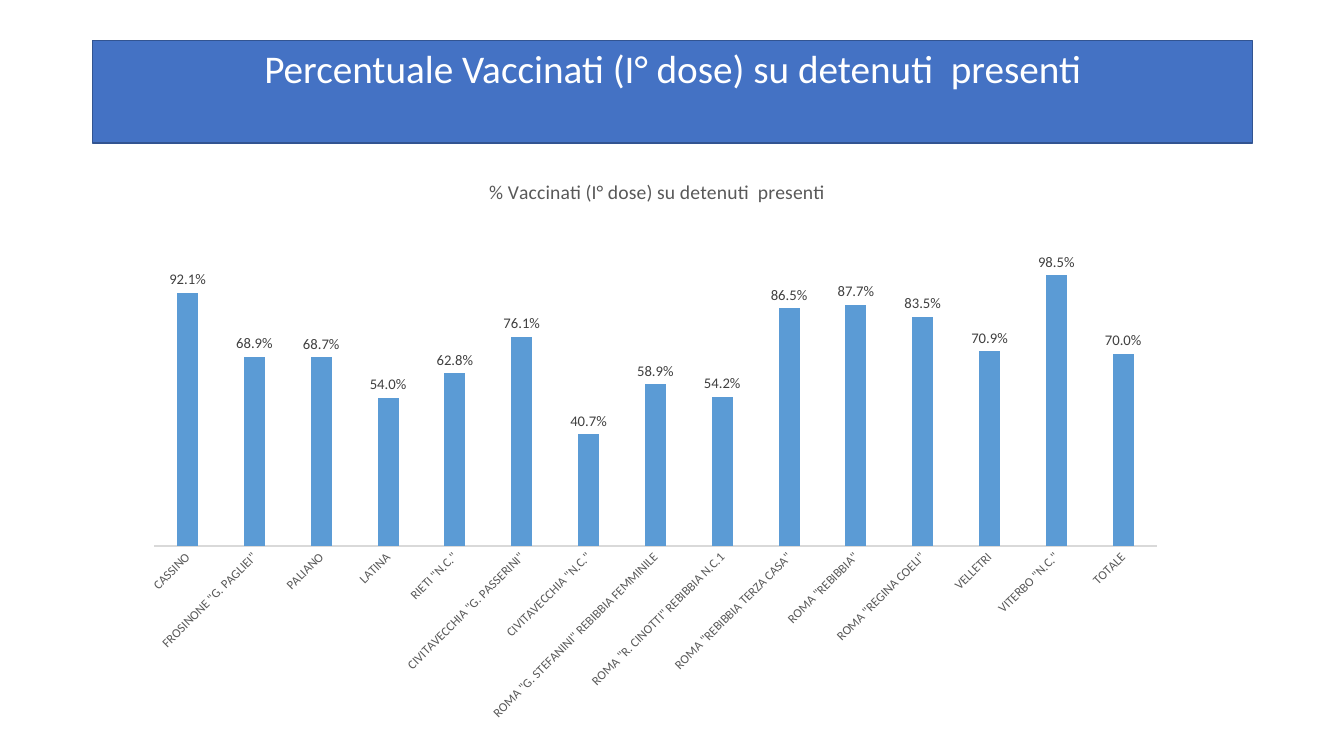
from lxml import etree
from pptx import Presentation
from pptx.chart.data import CategoryChartData
from pptx.dml.color import RGBColor
from pptx.enum.chart import XL_CHART_TYPE, XL_LABEL_POSITION, XL_TICK_MARK
from pptx.enum.text import MSO_ANCHOR, PP_ALIGN
from pptx.oxml.ns import qn
from pptx.util import Inches, Pt

COLUMNS = XL_CHART_TYPE.COLUMN_CLUSTERED
OUTSIDE_END = XL_LABEL_POSITION.OUTSIDE_END
NO_TICKS = XL_TICK_MARK.NONE
MIDDLE = MSO_ANCHOR.MIDDLE
CENTER = PP_ALIGN.CENTER
TITLE_ONLY = 5
FONT = "Calibri"
PERCENT = "0.0%"

VACCINATED = [
    ("CASSINO", 0.921),
    ('FROSINONE "G. PAGLIEI"', 0.689),
    ("PALIANO", 0.687),
    ("LATINA", 0.54),
    ('RIETI "N.C."', 0.628),
    ('CIVITAVECCHIA "G. PASSERINI"', 0.761),
    ('CIVITAVECCHIA "N.C."', 0.407),
    ('ROMA "G. STEFANINI" REBIBBIA FEMMINILE', 0.589),
    ('ROMA "R. CINOTTI" REBIBBIA N.C.1', 0.542),
    ('ROMA "REBIBBIA TERZA CASA"', 0.865),
    ('ROMA "REBIBBIA"', 0.877),
    ('ROMA "REGINA COELI"', 0.835),
    ("VELLETRI", 0.709),
    ('VITERBO "N.C."', 0.985),
    ("TOTALE", 0.7),
]


def color(hex_code):
    return RGBColor.from_string(hex_code)


def style_font(font, size, hex_code):
    font.name = FONT
    font.size = Pt(size)
    font.bold = False
    font.color.rgb = color(hex_code)


def paint(part, hex_code):
    part.format.fill.solid()
    part.format.fill.fore_color.rgb = color(hex_code)


def manual_layout(parent, after, **settings):
    for old in parent.findall(qn("c:layout")):
        parent.remove(old)
    layout = etree.Element(qn("c:layout"))
    manual = etree.SubElement(layout, qn("c:manualLayout"))
    for tag, value in settings.items():
        etree.SubElement(manual, qn(f"c:{tag}")).set("val", str(value))
    if after is None:
        parent.insert(0, layout)
    else:
        after.addnext(layout)


def add_banner(slide, text):
    banner = slide.shapes.title
    banner.left, banner.top = Inches(0.92), Inches(0.4)
    banner.width, banner.height = Inches(11.5), Inches(1.02)
    banner.fill.solid()
    banner.fill.fore_color.rgb = color("4472C4")
    banner.line.color.rgb = color("325491")
    banner.line.width = Pt(1)
    frame = banner.text_frame
    frame.word_wrap = True
    frame.vertical_anchor = MIDDLE
    frame.margin_bottom = Inches(0.47)
    heading = frame.paragraphs[0]
    heading.alignment = CENTER
    heading.line_spacing = 0.9
    run = heading.add_run()
    run.text = text
    style_font(run.font, 28, "FFFFFF")


def add_chart_title(chart, text):
    chart.has_title = True
    title = chart.chart_title
    title.include_in_layout = False
    run = title.text_frame.paragraphs[0].add_run()
    run.text = text
    style_font(run.font, 14, "595959")
    element = title._element
    manual_layout(element, element.find(qn("c:tx")),
                  xMode="edge", yMode="edge", x=0.34, y=0.04)


def style_axes(chart):
    institutes = chart.category_axis
    institutes.major_tick_mark = NO_TICKS
    institutes.minor_tick_mark = NO_TICKS
    institutes.has_major_gridlines = False
    institutes.format.line.color.rgb = color("D9D9D9")
    institutes.format.line.width = Pt(0.75)
    style_font(institutes.tick_labels.font, 9, "595959")
    body = institutes._element.find(qn("c:txPr")).find(qn("a:bodyPr"))
    body.set("rot", "-2700000")
    body.set("vert", "horz")

    share = chart.value_axis
    share.minimum_scale, share.maximum_scale = 0, 1.2
    share.has_major_gridlines = False
    share.tick_labels.number_format = PERCENT
    share.tick_labels.number_format_is_linked = False
    share.visible = False


def style_columns(plot):
    plot.gap_width = 219
    plot.overlap = -27
    plot.vary_by_categories = False
    paint(plot.series[0], "5B9BD5")
    plot.has_data_labels = True
    labels = plot.data_labels
    labels.show_value = True
    labels.position = OUTSIDE_END
    labels.number_format = PERCENT
    labels.number_format_is_linked = False
    style_font(labels.font, 10.5, "404040")


def add_vaccination_chart(slide, title):
    data = CategoryChartData(number_format=PERCENT)
    data.categories = [institute for institute, _ in VACCINATED]
    data.add_series("Series 1", [share for _, share in VACCINATED])
    chart = slide.shapes.add_chart(
        COLUMNS, Inches(1.28), Inches(1.5), Inches(10.4), Inches(5.77), data
    ).chart
    chart.has_legend = False
    style_font(chart.font, 10, "000000")
    add_chart_title(chart, title)
    style_axes(chart)
    style_columns(chart.plots[0])
    plot_area = chart._chartSpace.find(qn("c:chart")).find(qn("c:plotArea"))
    manual_layout(plot_area, None, layoutTarget="inner", xMode="edge",
                  yMode="edge", x=0.024, y=0.112, w=0.956, h=0.567)


def main():
    deck = Presentation()
    deck.slide_width, deck.slide_height = Inches(13.33), Inches(7.5)
    slide = deck.slides.add_slide(deck.slide_layouts[TITLE_ONLY])
    add_banner(slide, "Percentuale Vaccinati (I° dose) su detenuti  presenti")
    add_vaccination_chart(slide, "% Vaccinati (I° dose) su detenuti  presenti")
    deck.save("out.pptx")


if __name__ == "__main__":
    main()
